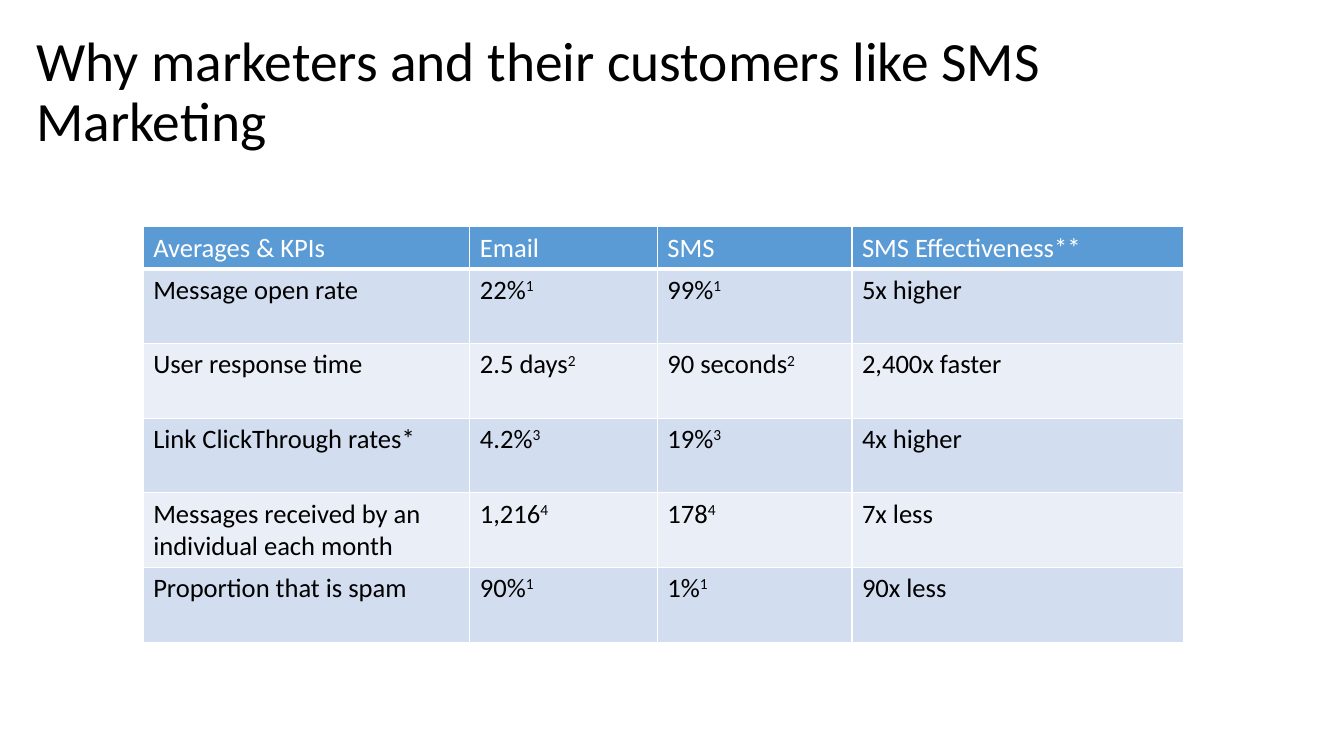
import pptx
import pptx.dml.color
import pptx.enum.text
import pptx.oxml
import pptx.oxml.ns
import pptx.util

PX = 9144  # EMU per px, 100 px to the inch


def px(length):
    return pptx.util.Emu(length * PX)


def color(hex_code):
    return pptx.dml.color.RGBColor.from_string(hex_code)


class SlideBuilder:
    font = "Calibri"
    ink = "000000"
    white = "FFFFFF"
    header_fill = "5B9BD5"
    band_fills = ("D2DEEF", "EAEFF7")
    title_size = 39.6
    cell_size = 19

    def __init__(self, presentation):
        self.slide = presentation.slides.add_slide(presentation.slide_layouts[5])

    def format_runs(self, paragraph, size, hex_code):
        for run in paragraph.runs:
            run.font.name = self.font
            run.font.size = pptx.util.Pt(size)
            run.font.bold = False
            run.font.color.rgb = color(hex_code)

    def title(self, text, left, top, width, height):
        heading = self.slide.shapes.title
        heading.left, heading.top = px(left), px(top)
        heading.width, heading.height = px(width), px(height)
        frame = heading.text_frame
        frame.text = text
        frame.word_wrap = True
        frame.auto_size = pptx.enum.text.MSO_AUTO_SIZE.NONE
        frame.vertical_anchor = pptx.enum.text.MSO_ANCHOR.MIDDLE
        paragraph = frame.paragraphs[0]
        paragraph.alignment = pptx.enum.text.PP_ALIGN.LEFT
        paragraph.line_spacing = 0.9
        self.format_runs(paragraph, self.title_size, self.ink)

    def borders(self, cell, bottom):
        properties = cell._tc.get_or_add_tcPr()
        widths = {"lnL": 1, "lnR": 1, "lnT": 1, "lnB": bottom}
        for index, (side, width) in enumerate(widths.items()):
            properties.insert(index, pptx.oxml.parse_xml(
                f'<a:{side} {pptx.oxml.ns.nsdecls("a")} w="{pptx.util.Pt(width)}">'
                f'<a:solidFill><a:srgbClr val="{self.white}"/></a:solidFill></a:{side}>'))

    def cell(self, cell, content, fill, hex_code, bottom=1):
        # A ^ separates the value from its superscript footnote number
        value, _, footnote = content.partition("^")
        cell.text_frame.text = value
        paragraph = cell.text_frame.paragraphs[0]
        if footnote:
            mark = paragraph.add_run()
            mark.text = footnote
            mark._r.get_or_add_rPr().set("baseline", "30000")
        self.format_runs(paragraph, self.cell_size, hex_code)
        cell.fill.solid()
        cell.fill.fore_color.rgb = color(fill)
        self.borders(cell, bottom)

    def table(self, rows, left, top, column_widths, row_heights):
        table = self.slide.shapes.add_table(
            len(rows), len(column_widths), px(left), px(top),
            px(sum(column_widths)), px(sum(row_heights))).table
        table.horz_banding = False
        for column, width in zip(table.columns, column_widths):
            column.width = px(width)
        for row, height in zip(table.rows, row_heights):
            row.height = px(height)
        for r, contents in enumerate(rows):
            for c, content in enumerate(contents):
                if r == 0:
                    self.cell(table.cell(r, c), content, self.header_fill, self.white, bottom=3)
                else:
                    self.cell(table.cell(r, c), content, self.band_fills[(r - 1) % 2], self.ink)


KPI_ROWS = [
    ("Averages & KPIs", "Email", "SMS", "SMS Effectiveness**"),
    ("Message open rate", "22%^1", "99%^1", "5x higher"),
    ("User response time", "2.5 days^2", "90 seconds^2", "2,400x faster"),
    ("Link ClickThrough rates*", "4.2%^3", "19%^3", "4x higher"),
    ("Messages received by an individual each month", "1,216^4", "178^4", "7x less"),
    ("Proportion that is spam", "90%^1", "1%^1", "90x less"),
]


def main():
    presentation = pptx.Presentation()
    presentation.slide_width, presentation.slide_height = px(1333), px(750)
    builder = SlideBuilder(presentation)

    # Heading
    builder.title("Why marketers and their customers like SMS Marketing", 26, 26, 1018, 133)

    # Email and SMS comparison
    builder.table(KPI_ROWS, 142, 225, [324, 186, 193, 329], [42] + [74] * 5)

    presentation.save("out.pptx")


if __name__ == "__main__":
    main()
